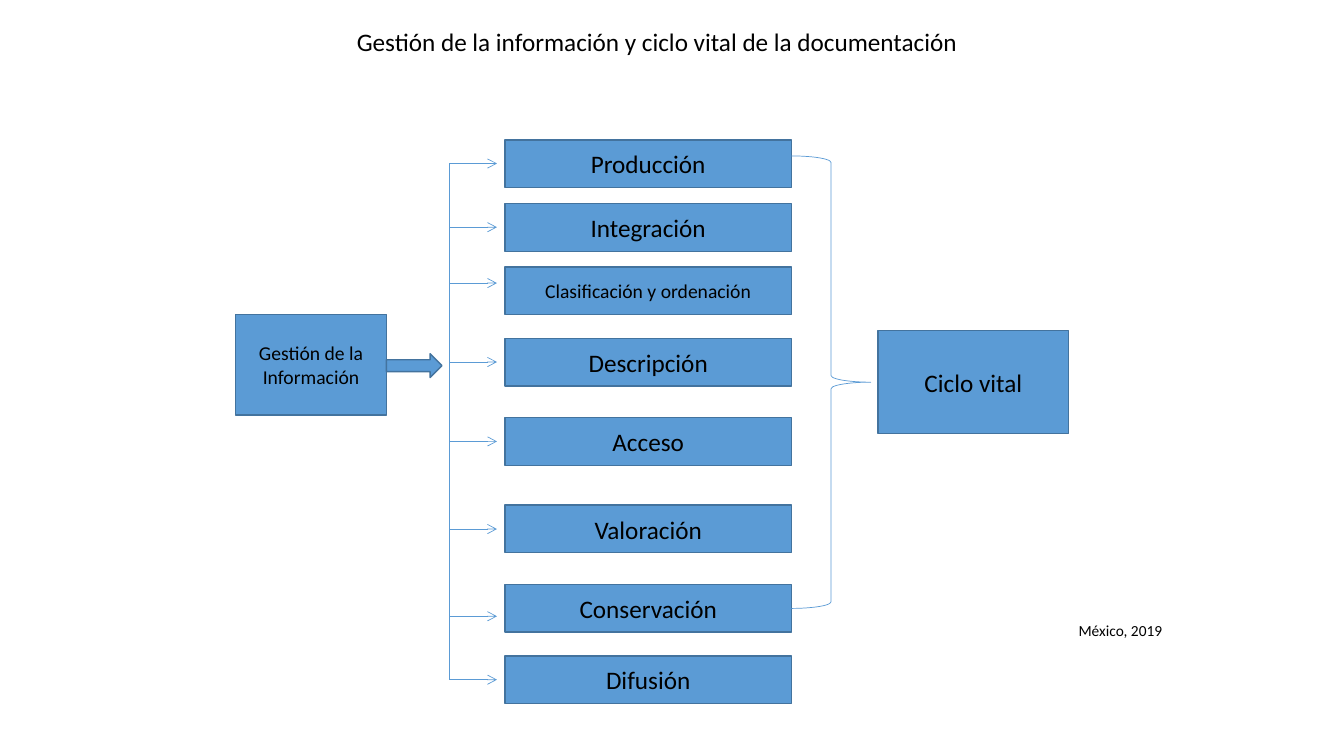
from pptx import Presentation
from pptx.dml.color import RGBColor
from pptx.enum.shapes import MSO_CONNECTOR as LINE, MSO_SHAPE as SHAPE
from pptx.enum.text import MSO_ANCHOR as ANCHOR, MSO_AUTO_SIZE as FIT, PP_ALIGN as ALIGN
from pptx.oxml.ns import qn
from pptx.util import Pt
from lxml.etree import SubElement

# Content
TITLE = "Gestión de la información y ciclo vital de la documentación"
SOURCE = "Gestión de la Información"
RESULT = "Ciclo vital"
PLACE = "México, 2019"
STAGES = [  # text, size, top of box, height of arrow on the slide
    ("Producción", 18, 100, 116.8),
    ("Integración", 18, 145.5, 162.3),
    ("Clasificación y ordenación", 14, 190.8, 202.2),
    ("Descripción", 18, 241.8, 258.6),
    ("Acceso", 18, 298.4, 315.3),
    ("Valoración", 18, 360.8, 377.9),
    ("Conservación", 18, 417.6, 440.2),
    ("Difusión", 18, 468.6, 485.5),
]

FONT = "Calibri"
BLACK, BLUE, EDGE = "000000", "5B9BD5", "43739E"
STAGE_LEFT, STAGE_WIDTH, STAGE_HEIGHT = 360.8, 204.5, 34
TRUNK_X, ARROW_END = 321, 355


def color(hex_code):
    return RGBColor.from_string(hex_code)


def write(frame, text, size, align):
    frame.text = text
    paragraph = frame.paragraphs[0]
    paragraph.alignment = align
    paragraph.font.size = Pt(size)
    paragraph.font.name = FONT
    paragraph.font.color.rgb = color(BLACK)


def add_figure(kind, left, top, width, height, edge=EDGE, weight=1):
    figure = slide.shapes.add_shape(kind, Pt(left), Pt(top), Pt(width), Pt(height))
    figure.shadow.inherit = False
    figure.line.color.rgb = color(edge)
    figure.line.width = Pt(weight)
    if kind == SHAPE.RIGHT_BRACE:
        figure.fill.background()
    else:
        figure.fill.solid()
        figure.fill.fore_color.rgb = color(BLUE)
    return figure


def add_box(text, size, left, top, width, height):
    frame = add_figure(SHAPE.RECTANGLE, left, top, width, height).text_frame
    frame.word_wrap = True
    frame.vertical_anchor = ANCHOR.MIDDLE
    write(frame, text, size, ALIGN.CENTER)


def add_line(x1, y1, x2, y2, arrow=False):
    line = slide.shapes.add_connector(LINE.STRAIGHT, Pt(x1), Pt(y1), Pt(x2), Pt(y2))
    line.line.color.rgb = color(BLUE)
    line.line.width = Pt(0.5)
    if arrow:
        SubElement(line.line._get_or_add_ln(), qn("a:tailEnd"), type="arrow")
    SubElement(line._element.spPr, qn("a:effectLst"))


deck = Presentation()
deck.slide_width, deck.slide_height = Pt(960), Pt(540)
slide = deck.slides.add_slide(deck.slide_layouts[5])

# Title
title = slide.shapes.title
title.left, title.top, title.width, title.height = Pt(247.7), Pt(15.3), Pt(448.6), Pt(29)
title.text_frame.auto_size = FIT.NONE
title.text_frame.word_wrap = False
title.text_frame.vertical_anchor = ANCHOR.TOP
write(title.text_frame, TITLE, 18, ALIGN.LEFT)

# Source and its arrow
add_box(SOURCE, 14, 168.2, 224.6, 108, 72)
add_figure(SHAPE.RIGHT_ARROW, 276, 252.7, 39.7, 17)

# Trunk, branches and stages
add_line(TRUNK_X, STAGES[0][3], TRUNK_X, STAGES[-1][3])
for stage, size, top, arrow_y in STAGES:
    add_line(TRUNK_X, arrow_y, ARROW_END, arrow_y, arrow=True)
    add_box(stage, size, STAGE_LEFT, top, STAGE_WIDTH, STAGE_HEIGHT)

# Brace and result
add_figure(SHAPE.RIGHT_BRACE, STAGE_LEFT + STAGE_WIDTH, 111.4, 56.7, 323.2, BLUE, 0.5)
add_box(RESULT, 18, 627.3, 236, 136, 73.7)

# Place and year
place = slide.shapes.add_textbox(Pt(763.3), Pt(440.2), Pt(75.6), Pt(42.5)).text_frame
place.word_wrap = False
write(place, PLACE, 11, ALIGN.LEFT)

deck.save("out.pptx")
